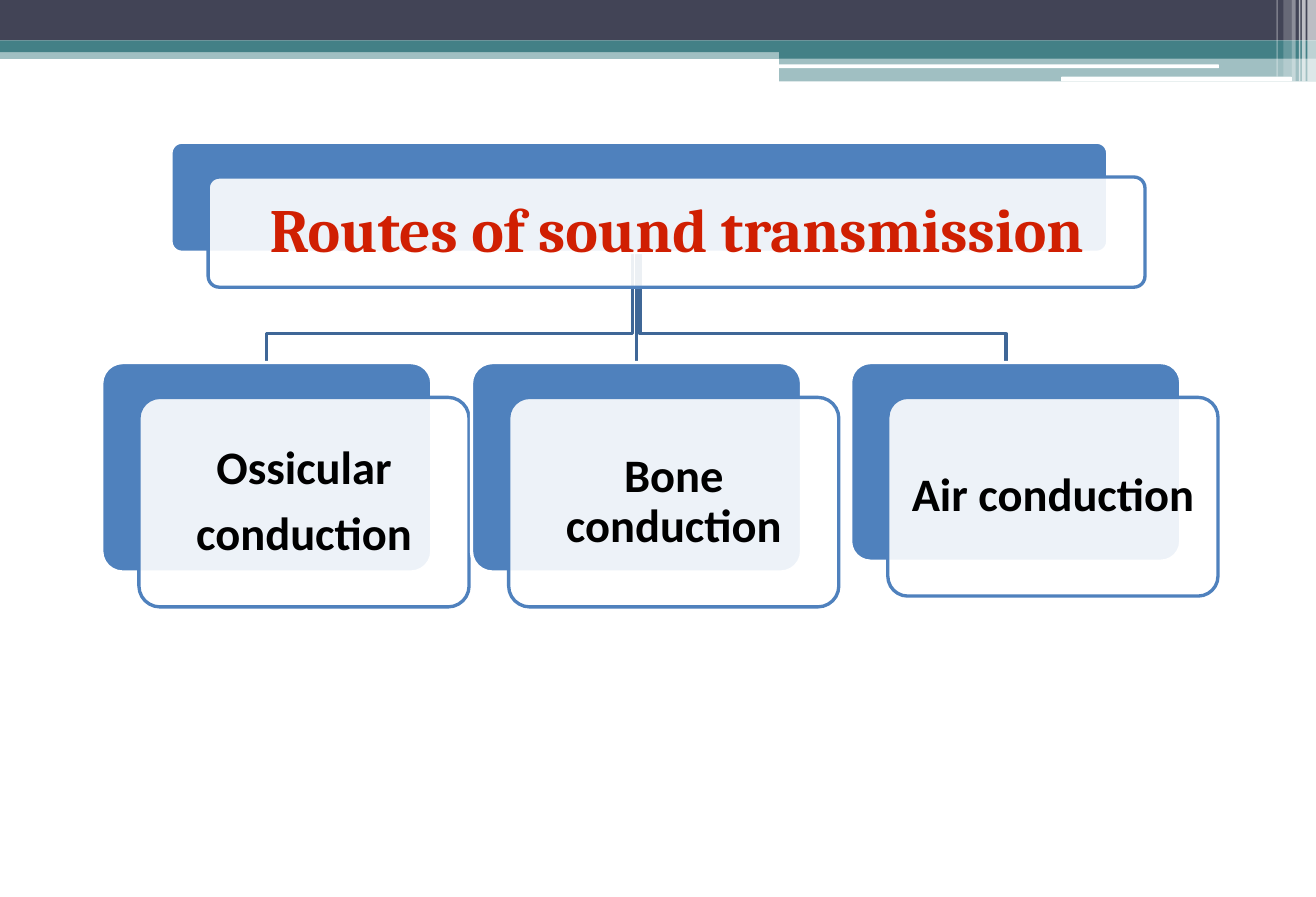
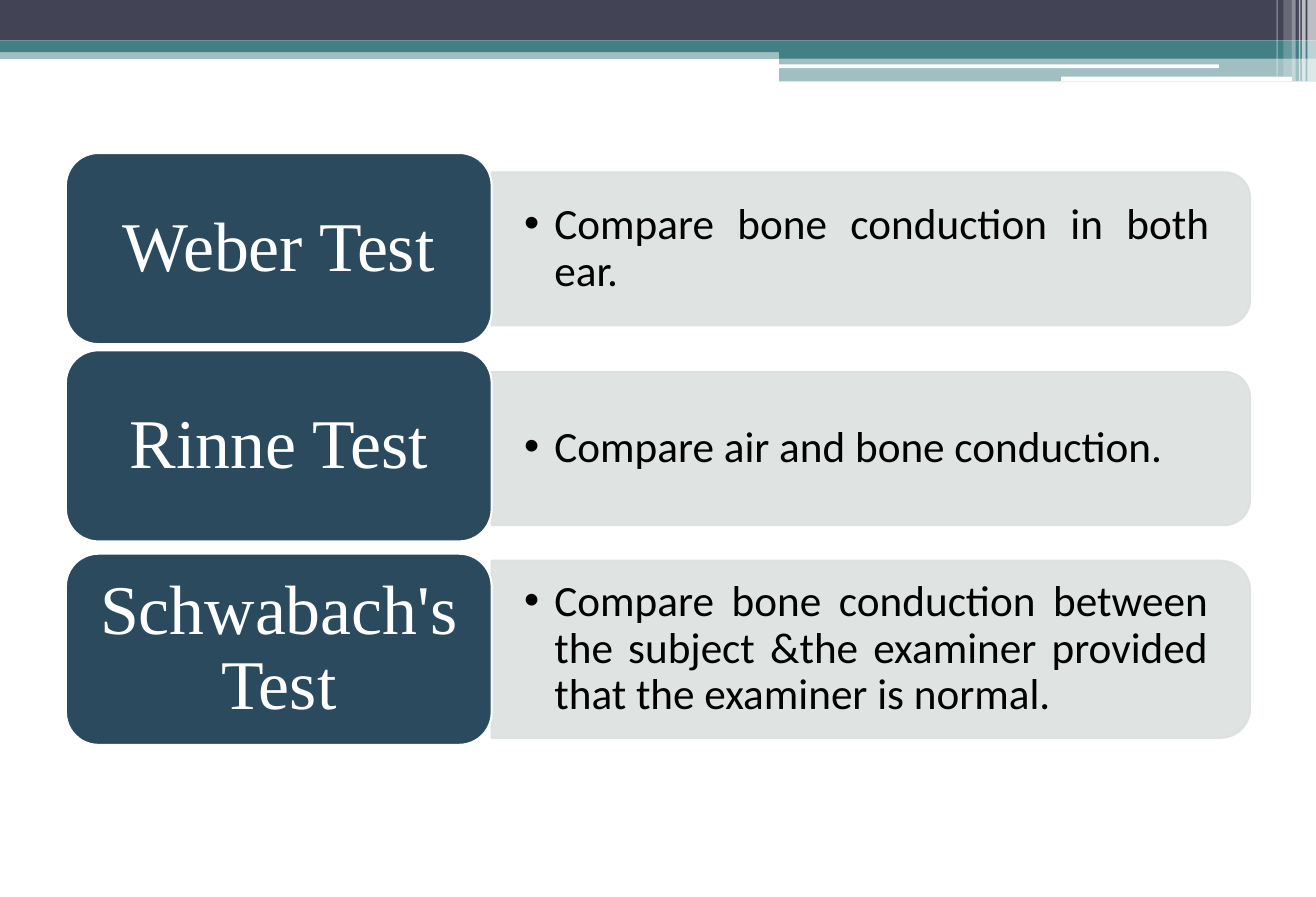
from dataclasses import dataclass

from lxml import etree
from pptx import Presentation
from pptx.dml.color import RGBColor
from pptx.enum.shapes import MSO_CONNECTOR, MSO_SHAPE
from pptx.enum.text import MSO_ANCHOR, MSO_AUTO_SIZE, PP_ALIGN
from pptx.oxml.ns import qn
from pptx.util import Cm, Pt

RECTANGLE = MSO_SHAPE.RECTANGLE
ROUNDED = MSO_SHAPE.ROUNDED_RECTANGLE
ROUNDED_TOP = MSO_SHAPE.ROUND_2_SAME_RECTANGLE
STRAIGHT = MSO_CONNECTOR.STRAIGHT
MIDDLE = MSO_ANCHOR.MIDDLE
NO_AUTOFIT = MSO_AUTO_SIZE.NONE
CENTER = PP_ALIGN.CENTER
JUSTIFY = PP_ALIGN.JUSTIFY
TITLE_ONLY, COMPARISON = 5, 4
CORNER_SHARE = 0.29


@dataclass(frozen=True)
class Theme:
    navy: str = "424456"
    teal: str = "438086"
    white: str = "FFFFFF"
    black: str = "000000"
    blue: str = "4F81BD"
    branch: str = "3F6797"
    red: str = "D01F02"
    slate: str = "2B4A5E"
    mist: str = "DCE0DE"
    heading_font: str = "Cambria"
    body_font: str = "Calibri"
    test_font: str = "Times New Roman"
    heading_size: int = 37
    route_size: int = 28
    test_size: int = 42
    detail_size: int = 26
    tree_line: float = 2
    row_line: float = 1.25
    tree_corner: float = 0.1
    row_corner: float = 0.17


THEME = Theme()

BANDS = [
    (RECTANGLE, (0, 1.02, 27.94, 0.23), THEME.teal, 50),
    (RECTANGLE, (0, 0, 27.94, 0.86), THEME.navy, 100),
    (RECTANGLE, (0, 0.86, 27.94, 0.25), THEME.teal, 100),
    (RECTANGLE, (16.54, 0.99, 11.4, 0.25), THEME.teal, 100),
    (RECTANGLE, (16.54, 1.22, 11.4, 0.51), THEME.teal, 50),
    (ROUNDED, (16.51, 1.37, 9.37, 0.08), THEME.white, 100),
    (ROUNDED, (22.53, 1.63, 4.9, 0.1), THEME.white, 100),
]
STRIPES = [
    (27.76, 0.18, 1.73, 65),
    (27.64, 0.08, 1.73, 65),
    (27.58, 0.03, 1.73, 60),
    (27.43, 0.08, 1.73, 40),
    (27.25, 0.18, 1.63, 20),
    (27.1, 0.03, 1.63, 30),
]
ROUTES = [
    ((2.16, 7.7, 7.01, 4.45), ["Ossicular", "conduction"]),
    ((10.01, 7.7, 7.01, 4.45), ["Bone conduction"]),
    ((18.06, 7.7, 7.01, 4.22), ["Air conduction"]),
]
TESTS = [
    ("Weber Test", 3.25, 3.66, 3.25, "Compare bone conduction in both ear."),
    ("Rinne Test", 7.44, 7.9, 3.25, "Compare air and bone conduction."),
    ("Schwabach's Test", 11.76, 11.91, 3.76,
     "Compare bone conduction between the subject &the examiner "
     "provided that the examiner is normal."),
]


def apply_formats(target, formats):
    for name, value in formats.items():
        setattr(target, name, value)


def lengths(box):
    return [Cm(value) for value in box]


def inset_box(box, corner):
    left, top, width, height = box
    inset = height * corner * CORNER_SHARE
    return left + inset, top + inset, width - 2 * inset, height - 2 * inset


def set_opacity(shape, query, percent):
    for color in shape.element.spPr.xpath(query):
        etree.SubElement(color, qn("a:alpha")).set("val", str(percent * 1000))


def add_panel(slide, kind, box, fill, line=None, width=0, opacity=100,
              line_opacity=100, corner=None):
    shape = slide.shapes.add_shape(kind, *lengths(box))
    shape.shadow.inherit = False
    shape.fill.solid()
    shape.fill.fore_color.rgb = RGBColor.from_string(fill)
    if line:
        shape.line.color.rgb = RGBColor.from_string(line)
        shape.line.width = Pt(width)
    else:
        shape.line.fill.background()
    if corner:
        shape.adjustments[0] = corner
    if opacity < 100:
        set_opacity(shape, "a:solidFill/a:srgbClr", opacity)
    if line_opacity < 100:
        set_opacity(shape, "a:ln/a:solidFill/a:srgbClr", line_opacity)
    return shape


def write_text(shape, lines, margins, font, size, color, bold=False,
               alignment=CENTER, after=0.35, bullet=False):
    frame = shape.text_frame
    side, edge = lengths(margins)
    apply_formats(frame, {
        "word_wrap": True, "auto_size": NO_AUTOFIT, "vertical_anchor": MIDDLE,
        "margin_left": side, "margin_right": side,
        "margin_top": edge, "margin_bottom": edge,
    })
    for index, line in enumerate(lines):
        paragraph = frame.add_paragraph() if index else frame.paragraphs[0]
        apply_formats(paragraph, {
            "alignment": alignment, "line_spacing": 0.9,
            "space_before": Pt(0), "space_after": Pt(size * after),
        })
        if bullet:
            properties = paragraph._p.get_or_add_pPr()
            properties.set("marL", str(Cm(0.64)))
            properties.set("indent", str(Cm(-0.64)))
            etree.SubElement(properties, qn("a:buChar")).set("char", "•")
        run = paragraph.add_run()
        run.text = line
        apply_formats(run.font, {"name": font, "size": Pt(size), "bold": bold})
        run.font.color.rgb = RGBColor.from_string(color)


def place_on_top(slide, placeholder, box):
    names = ("left", "top", "width", "height")
    apply_formats(placeholder, dict(zip(names, lengths(box))))
    slide.shapes.element.append(placeholder.element)


def keep_placeholders(slide, kept):
    for placeholder in list(slide.placeholders):
        if placeholder.placeholder_format.idx not in kept:
            slide.shapes.element.remove(placeholder.element)


def add_master_bands(presentation, slide):
    stripes = [(RECTANGLE, (left, 0, width, height), THEME.white, opacity)
               for left, width, height, opacity in STRIPES]
    tree = presentation.slide_master.shapes.element
    for kind, box, color, opacity in BANDS + stripes:
        band = add_panel(slide, kind, box, color, opacity=opacity)
        tree.append(band.element)


def add_branches(slide, stem, top, bend, bottom, reach, gap):
    branches = []
    for side in (1, -1):
        start = stem + side * gap
        end = stem + side * reach
        builder = slide.shapes.build_freeform(Cm(start), Cm(top))
        points = [(start, bend), (end, bend), (end, bottom)]
        builder.add_line_segments([lengths(point) for point in points], close=False)
        elbow = builder.convert_to_shape()
        elbow.shadow.inherit = False
        elbow.fill.background()
        branches.append(elbow)
    straight = slide.shapes.add_connector(
        STRAIGHT, *lengths((stem, top, stem, bottom)))
    etree.SubElement(straight.element.spPr, qn("a:effectLst"))
    for branch in branches + [straight]:
        branch.line.color.rgb = RGBColor.from_string(THEME.branch)
        branch.line.width = Pt(THEME.tree_line)


def add_card(slide, box):
    left, top, width, height = box
    front = (left + 0.79, top + 0.74, width, height)
    shared = {"width": THEME.tree_line, "corner": THEME.tree_corner}
    add_panel(slide, ROUNDED, box, THEME.blue, THEME.white, **shared)
    add_panel(slide, ROUNDED, front, THEME.white, THEME.blue, opacity=90, **shared)
    return inset_box(front, THEME.tree_corner)


def build_routes_slide(slide):
    keep_placeholders(slide, {0})
    add_branches(slide, stem=13.51, top=5.36, bend=7.09, bottom=7.7,
                 reach=7.85, gap=0.08)
    title = slide.shapes.title
    place_on_top(slide, title, add_card(slide, (3.63, 3.02, 19.89, 2.34)))
    write_text(title, ["Routes of sound transmission"], (0.38, 0.38),
               THEME.heading_font, THEME.heading_size, THEME.red, bold=True)
    for box, lines in ROUTES:
        label = slide.shapes.add_textbox(*lengths(add_card(slide, box)))
        write_text(label, lines, (0.3, 0.3), THEME.body_font,
                   THEME.route_size, THEME.black, bold=True)


def add_detail(slide, placeholder, box, text):
    left, top, width, height = box
    upright = (left + (width - height) / 2, top + (height - width) / 2, height, width)
    panel = add_panel(slide, ROUNDED_TOP, upright, THEME.mist, THEME.mist,
                      THEME.row_line, opacity=90, line_opacity=90)
    panel.rotation = 90
    inset = height * THEME.row_corner * CORNER_SHARE
    place_on_top(slide, placeholder,
                 (left, top + inset, width - inset, height - 2 * inset))
    write_text(placeholder, [text], (0.69, 0.35), THEME.body_font,
               THEME.detail_size, THEME.black, alignment=JUSTIFY,
               after=0.15, bullet=True)


def add_test_name(slide, box, name):
    add_panel(slide, ROUNDED, box, THEME.slate, THEME.white, THEME.row_line,
              corner=THEME.row_corner)
    label = slide.shapes.add_textbox(*lengths(inset_box(box, THEME.row_corner)))
    write_text(label, [name], (0.43, 0.22), THEME.test_font,
               THEME.test_size, THEME.white)


def build_tests_slide(slide):
    keep_placeholders(slide, {1, 2, 3})
    bodies = list(slide.placeholders)
    for body, (name, name_top, detail_top, height, detail) in zip(bodies, TESTS):
        add_detail(slide, body, (10.44, detail_top, 16.1, height), detail)
        add_test_name(slide, (1.4, name_top, 9.04, 4.06), name)


def main():
    presentation = Presentation()
    apply_formats(presentation, {"slide_width": Cm(27.94), "slide_height": Cm(19.05)})
    layouts = presentation.slide_layouts
    routes = presentation.slides.add_slide(layouts[TITLE_ONLY])
    add_master_bands(presentation, routes)
    build_routes_slide(routes)
    build_tests_slide(presentation.slides.add_slide(layouts[COMPARISON]))
    presentation.save("out.pptx")


if __name__ == "__main__":
    main()
